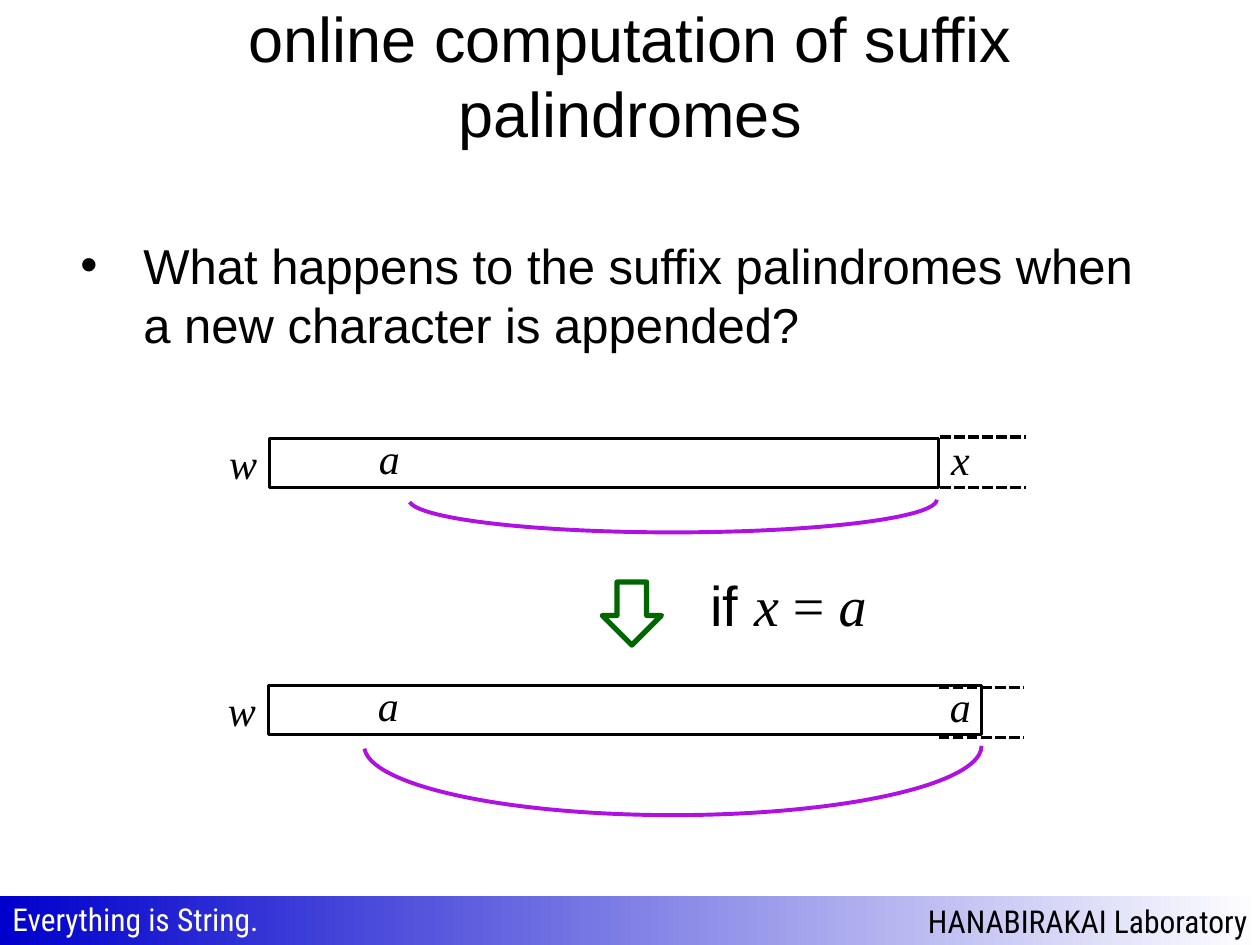
from typing import NamedTuple

from lxml.etree import SubElement
from pptx import Presentation
from pptx.dml.color import RGBColor
from pptx.enum.dml import MSO_LINE
from pptx.enum.shapes import MSO_CONNECTOR, MSO_SHAPE
from pptx.enum.text import MSO_ANCHOR, PP_ALIGN
from pptx.oxml.ns import qn
from pptx.util import Inches, Pt

BLACK, WHITE, BLUE = "000000", "FFFFFF", "0000CC"
PURPLE, GREEN = "AF11E3", "006600"
SANS, SERIF, FOOTER = "Arial", "Times New Roman", "Roboto Condensed"


class Span(NamedTuple):
    text: str
    size: float = 24
    font: str = SERIF
    color: str = BLACK
    italic: bool = False


class Box(NamedTuple):
    left: float
    top: float
    width: float
    height: float

    def lengths(self):
        return [Inches(value) for value in self]


class StringRow(NamedTuple):
    """A string w drawn as a bar, with its suffix palindrome as an arc."""
    bar: Box
    arc: Box
    last_letter: str
    last_box: Box
    dashes_left: float
    dashes_top: float


ROWS = [
    StringRow(Box(2.14, 3.48, 5.31, 0.39), Box(5.08, 1.87, 0.52, 4.19),
              "x", Box(7.45, 3.39, 0.45, 0.5), 7.46, 3.47),
    StringRow(Box(2.13, 5.44, 5.66, 0.39), Box(4.79, 3.47, 1.1, 4.9),
              "a", Box(7.44, 5.35, 0.47, 0.5), 7.45, 5.455),
]


def rgb(color: str) -> RGBColor:
    return RGBColor.from_string(color)


def write(para, *spans: Span) -> None:
    for span in spans:
        run = para.add_run()
        run.text = span.text
        formats = {"size": Pt(span.size), "name": span.font, "italic": span.italic}
        for name, value in formats.items():
            setattr(run.font, name, value)
        run.font.color.rgb = rgb(span.color)


def add_text(page, box: Box, *spans: Span, wrap: bool = False):
    frame = page.shapes.add_textbox(*box.lengths()).text_frame
    frame.word_wrap = wrap
    write(frame.paragraphs[0], *spans)
    return frame.paragraphs[0]


def add_outline(page, kind, box: Box, color: str, width: float):
    shape = page.shapes.add_shape(kind, *box.lengths())
    shape.shadow.inherit = False
    shape.fill.background()
    shape.line.color.rgb = rgb(color)
    shape.line.width = Pt(width)
    return shape


def add_dashes(page, left: float, top: float) -> None:
    line = page.shapes.add_connector(
        MSO_CONNECTOR.STRAIGHT, Inches(left), Inches(top), Inches(left + 0.68), Inches(top))
    line.line.color.rgb = rgb(BLACK)
    line.line.width = Pt(2)
    line.line.dash_style = MSO_LINE.SQUARE_DOT
    SubElement(line._element.spPr, qn("a:effectLst"))


def add_row(page, row: StringRow) -> None:
    left, top = row.bar.left, row.bar.top
    add_outline(page, MSO_SHAPE.RECTANGLE, row.bar, BLACK, 2)
    add_text(page, Box(left - 0.42, top - 0.06, 0.37, 0.5), Span("w", italic=True), wrap=True)
    add_text(page, Box(left + 0.77, top - 0.1, 0.47, 0.5), Span("a", italic=True))
    add_text(page, row.last_box, Span(row.last_letter, italic=True))
    for offset in (0, 0.4):
        add_dashes(page, row.dashes_left, row.dashes_top + offset)
    arc = add_outline(page, MSO_SHAPE.ARC, row.arc, PURPLE, 2.25)
    arc.adjustments[0], arc.adjustments[1] = 162, 53.683
    arc.rotation = 90


def add_footer(page) -> None:
    band = page.shapes.add_shape(MSO_SHAPE.RECTANGLE, *Box(0, 7.11, 10, 0.39).lengths())
    band.shadow.inherit = False
    band.line.fill.background()
    band.fill.gradient()
    band.fill.gradient_angle = 0
    for stop, color, position in zip(band.fill.gradient_stops, (BLUE, WHITE), (0, 1)):
        stop.color.rgb = rgb(color)
        stop.position = position
    frame = band.text_frame
    frame.word_wrap = False
    frame.vertical_anchor = MSO_ANCHOR.MIDDLE
    frame.paragraphs[0].alignment = PP_ALIGN.RIGHT
    write(frame.paragraphs[0], Span("HANABIRAKAI Laboratory", 18, FOOTER))
    add_text(page, Box(0, 7.09, 2.22, 0.4), Span("Everything is String.", 18, FOOTER, WHITE))


def set_title(page) -> None:
    title = page.shapes.title
    box = Box(0.5, 0.13, 9, 0.93).lengths()
    for name, value in zip(("left", "top", "width", "height"), box):
        setattr(title, name, value)
    frame = title.text_frame
    frame.vertical_anchor = MSO_ANCHOR.MIDDLE
    frame.paragraphs[0].alignment = PP_ALIGN.CENTER
    write(frame.paragraphs[0], Span("online computation of suffix palindromes", 36, SANS))


def add_question(page) -> None:
    para = add_text(
        page, Box(0.54, 1.82, 8.72, 1.2),
        Span("What happens to the suffix palindromes when a new character is appended?", 28, SANS),
        wrap=True)
    para.space_before = Pt(6.2)
    properties = para._p.get_or_add_pPr()
    properties.set("marL", str(Inches(0.5)))
    properties.set("indent", str(Inches(-0.5)))
    SubElement(properties, qn("a:buFont"), typeface=SANS)
    SubElement(properties, qn("a:buChar"), char="•")


def main() -> None:
    deck = Presentation()
    deck.slide_width, deck.slide_height = Inches(10), Inches(7.5)
    page = deck.slides.add_slide(deck.slide_layouts[5])
    add_footer(page)
    set_title(page)
    add_question(page)
    for row in ROWS:
        add_row(page, row)
    add_outline(page, MSO_SHAPE.DOWN_ARROW, Box(4.78, 4.62, 0.47, 0.5), GREEN, 3)
    add_text(page, Box(5.54, 4.48, 1.55, 0.64), Span("if ", 32, SANS),
             Span("x ", 32, italic=True), Span("=", 32), Span(" a", 32, italic=True))
    deck.save("out.pptx")


if __name__ == "__main__":
    main()
